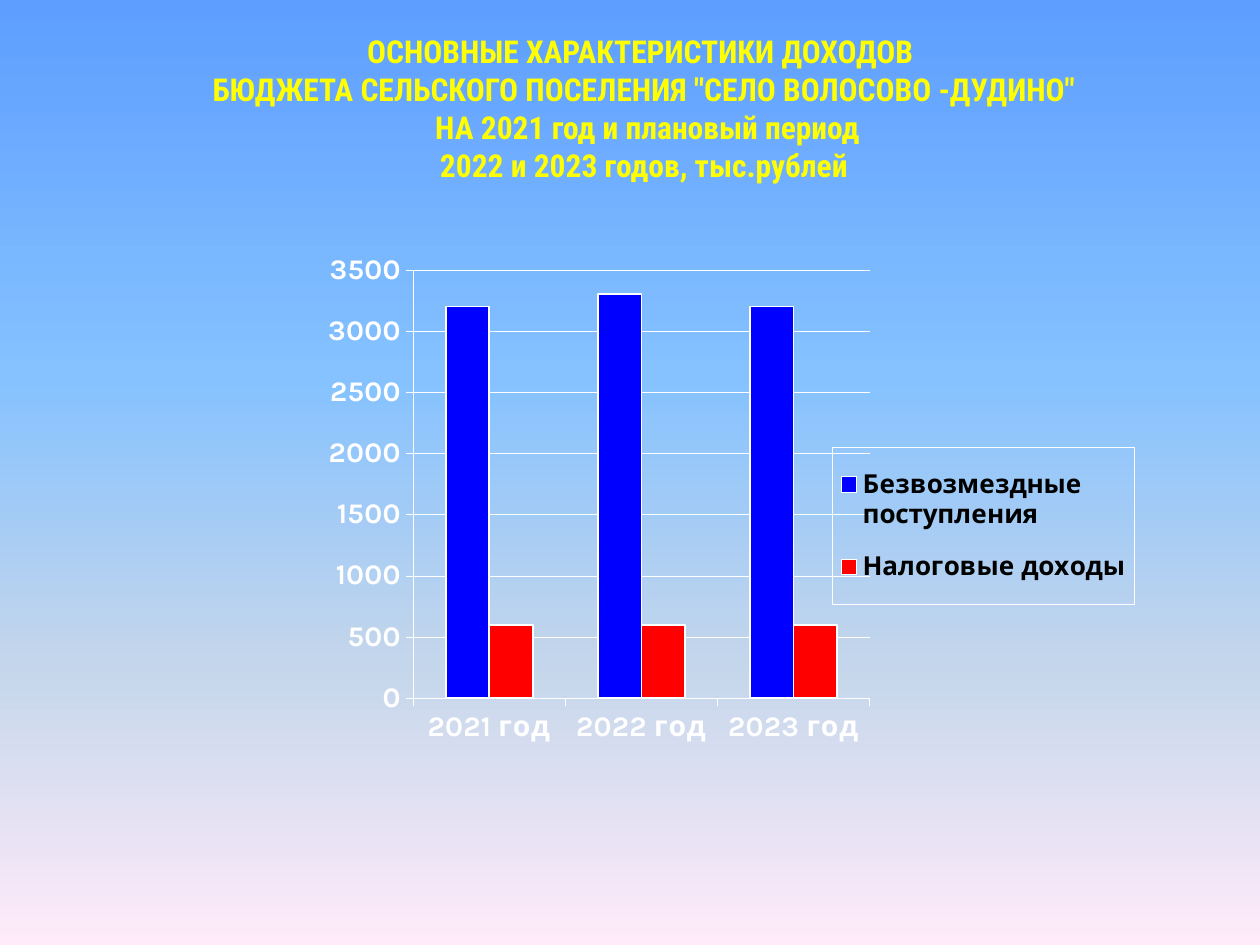
import pptx
import pptx.util
import pptx.chart.data
import pptx.dml.color
import pptx.enum.chart
import pptx.enum.text
import pptx.oxml
import pptx.oxml.ns

PX = 914400 // 126
RGB = pptx.dml.color.RGBColor
WHITE = RGB(255, 255, 255)
BLACK = RGB(0, 0, 0)
YELLOW = RGB(255, 255, 0)
BLUE = RGB(0, 0, 255)
RED = RGB(255, 0, 0)
SKY = [
    (0, RGB(0x5E, 0x9E, 0xFF)),
    (40, RGB(0x85, 0xC2, 0xFF)),
    (70, RGB(0xC4, 0xD6, 0xEB)),
    (100, RGB(0xFF, 0xEB, 0xFA)),
]

TITLE = [
    "ОСНОВНЫЕ ХАРАКТЕРИСТИКИ ДОХОДОВ ",
    'БЮДЖЕТА СЕЛЬСКОГО ПОСЕЛЕНИЯ "СЕЛО ВОЛОСОВО -ДУДИНО"',
    " НА 2021 год и плановый период",
    "2022 и 2023 годов, тыс.рублей",
]
YEARS = ["2021 год", "2022 год", "2023 год"]
SERIES = [
    ("Безвозмездные поступления", (3200, 3300, 3200), BLUE),
    ("Налоговые доходы", (600, 600, 600), RED),
]
TITLE_BOX = (64, 26, 1160, 159)
CHART_BOX = (249, 241, 888, 568)
PLOT_BOX = (413, 270, 456, 428)
KEY_BOX = (832, 448, 302, 156)


def scale(box):
    return [n * PX for n in box]


def style(font, name, size, color):
    font.name = name
    font.size = pptx.util.Pt(size)
    font.bold = True
    font.color.rgb = color


def outline(line, width):
    line.color.rgb = WHITE
    line.width = pptx.util.Pt(width)


def layout(box, inner=False):
    left, top, wide, high = CHART_BOX
    parts = [
        ("x", (box[0] - left) / wide),
        ("y", (box[1] - top) / high),
        ("w", box[2] / wide),
        ("h", box[3] / high),
    ]
    target = '<c:layoutTarget val="inner"/>' if inner else ""
    modes = '<c:xMode val="edge"/><c:yMode val="edge"/>'
    sizes = "".join(f'<c:{key} val="{val:.3f}"/>' for key, val in parts)
    return pptx.oxml.parse_xml(
        f'<c:layout {pptx.oxml.ns.nsdecls("c")}><c:manualLayout>'
        f"{target}{modes}{sizes}</c:manualLayout></c:layout>"
    )


def paint_sky(slide):
    fill = slide.background.fill
    fill.gradient()
    fill.gradient_angle = 270
    stops = slide.element.find(".//" + pptx.oxml.ns.qn("a:gsLst"))
    for stop in list(stops):
        stops.remove(stop)
    for pos, color in SKY:
        stops.append(pptx.oxml.parse_xml(
            f'<a:gs {pptx.oxml.ns.nsdecls("a")} pos="{pos * 1000}">'
            f'<a:srgbClr val="{color}"/></a:gs>'
        ))


def add_title(slide):
    title = slide.shapes.title
    title.left, title.top, title.width, title.height = scale(TITLE_BOX)
    frame = title.text_frame
    frame.text = "\n".join(TITLE)
    frame.word_wrap = False
    frame.auto_size = pptx.enum.text.MSO_AUTO_SIZE.NONE
    frame.vertical_anchor = pptx.enum.text.MSO_ANCHOR.TOP
    for para in frame.paragraphs:
        para.alignment = pptx.enum.text.PP_ALIGN.CENTER
        para.space_before = pptx.util.Pt(0)
        for run in para.runs:
            style(run.font, "Roboto Condensed", 18, YELLOW)


def add_chart(slide):
    kinds = pptx.enum.chart
    data = pptx.chart.data.CategoryChartData()
    data.categories = YEARS
    for name, values, _ in SERIES:
        data.add_series(name, values)
    chart = slide.shapes.add_chart(
        kinds.XL_CHART_TYPE.COLUMN_CLUSTERED, *scale(CHART_BOX), data
    ).chart
    chart.has_title = False
    style(chart.font, "Karla", 16.2, WHITE)

    plot = chart.plots[0]
    plot.vary_by_categories = False
    plot.gap_width = 150
    plot.overlap = 0
    for item, (_, _, color) in zip(plot.series, SERIES):
        item.format.fill.solid()
        item.format.fill.fore_color.rgb = color
        outline(item.format.line, 1)

    for axis in (chart.category_axis, chart.value_axis):
        style(axis.tick_labels.font, "Karla", 16.2, WHITE)
        outline(axis.format.line, 0.25)
        axis.major_tick_mark = kinds.XL_TICK_MARK.OUTSIDE
        axis.minor_tick_mark = kinds.XL_TICK_MARK.NONE
    chart.category_axis.tick_label_position = kinds.XL_TICK_LABEL_POSITION.LOW
    axis = chart.value_axis
    axis.minimum_scale = 0
    axis.maximum_scale = 3500
    axis.major_unit = 500
    axis.has_major_gridlines = True
    outline(axis.major_gridlines.format.line, 0.25)

    area = chart.element.find(".//" + pptx.oxml.ns.qn("c:plotArea"))
    for old in area.findall(pptx.oxml.ns.qn("c:layout")):
        area.remove(old)
    area.insert(0, layout(PLOT_BOX, inner=True))
    add_key(chart)


def add_key(chart):
    chart.has_legend = True
    key = chart.legend
    key.position = pptx.enum.chart.XL_LEGEND_POSITION.RIGHT
    key.include_in_layout = False
    style(key.font, "Karla", 14.9, BLACK)
    node = chart.element.find(".//" + pptx.oxml.ns.qn("c:legend"))
    for old in node.findall(pptx.oxml.ns.qn("c:layout")):
        node.remove(old)
    over = node.find(pptx.oxml.ns.qn("c:overlay"))
    over.addprevious(layout(KEY_BOX))
    over.addnext(pptx.oxml.parse_xml(
        f'<c:spPr {pptx.oxml.ns.nsdecls("c", "a")}><a:noFill/>'
        f'<a:ln w="3175"><a:solidFill><a:srgbClr val="{WHITE}"/>'
        "</a:solidFill></a:ln></c:spPr>"
    ))


def main():
    deck = pptx.Presentation()
    deck.slide_width, deck.slide_height = scale((1260, 945))
    slide = deck.slides.add_slide(deck.slide_layouts[5])
    paint_sky(slide)
    add_title(slide)
    add_chart(slide)
    deck.save("out.pptx")


if __name__ == "__main__":
    main()
